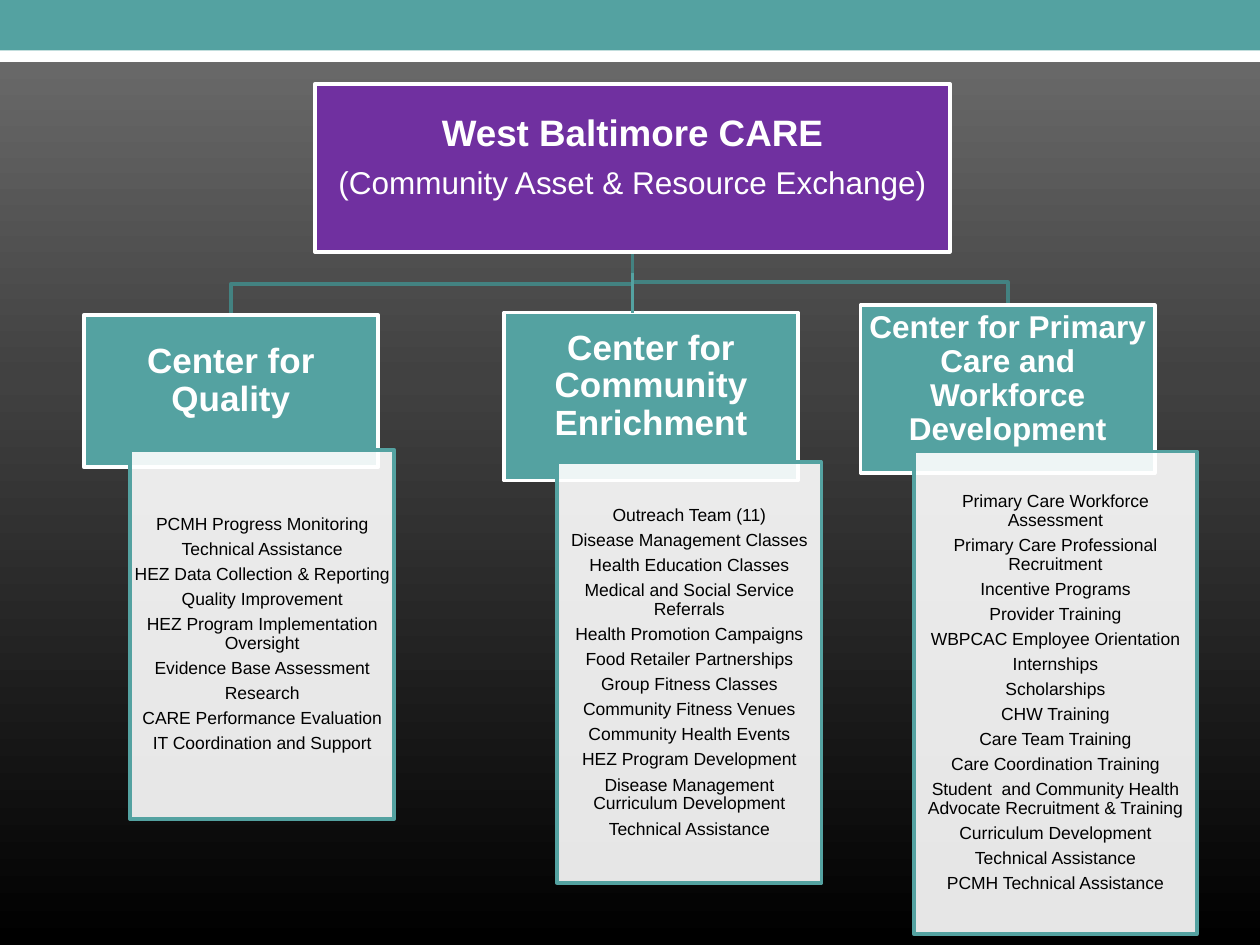
import copy

import pptx
import pptx.dml.color
import pptx.enum.shapes
import pptx.enum.text
import pptx.oxml
import pptx.oxml.ns
import pptx.util
from pptx.util import Cm

TEAL, WHITE, BLACK = "54A2A1", "FFFFFF", "000000"
LINE = 2.08
TRUNK = 12.75

# heading, size, heading box, list box (left, top, width, height in cm), items
CENTERS = [
    ("Center for Quality", 20, (1.69, 6.35, 5.93, 3.07), (2.62, 9.07, 5.33, 7.44), [
        "PCMH Progress Monitoring",
        "Technical Assistance",
        "HEZ Data Collection & Reporting",
        "Quality Improvement",
        "HEZ Program Implementation Oversight",
        "Evidence Base Assessment",
        "Research",
        "CARE Performance Evaluation",
        "IT Coordination and Support",
    ]),
    ("Center for Community Enrichment", 20, (10.16, 6.3, 5.93, 3.39), (11.23, 9.32, 5.33, 8.48), [
        "Outreach Team (11)",
        "Disease Management Classes",
        "Health Education Classes",
        "Medical and Social Service Referrals",
        "Health Promotion Campaigns",
        "Food Retailer Partnerships",
        "Group Fitness Classes",
        "Community Fitness Venues",
        "Community Health Events",
        "HEZ Program Development",
        "Disease Management Curriculum Development",
        "Technical Assistance",
    ]),
    ("Center for Primary Care and Workforce Development", 18,
     (17.35, 6.15, 5.93, 3.39), (18.42, 9.1, 5.71, 9.73), [
        "Primary Care Workforce Assessment",
        "Primary Care Professional Recruitment",
        "Incentive Programs",
        "Provider Training",
        "WBPCAC Employee Orientation",
        "Internships",
        "Scholarships",
        "CHW Training",
        "Care Team Training",
        "Care Coordination Training",
        "Student  and Community Health Advocate Recruitment & Training",
        "Curriculum Development",
        "Technical Assistance",
        "PCMH Technical Assistance",
    ]),
]


def rgb(code):
    return pptx.dml.color.RGBColor.from_string(code)


def paint_back(slide, stops):
    fill = slide.background.fill
    fill.gradient()
    fill.gradient_angle = 270
    group = slide.element.find(".//" + pptx.oxml.ns.qn("a:gsLst"))
    while len(group) < len(stops):
        group.append(copy.deepcopy(group[-1]))
    for stop, (place, color) in zip(fill.gradient_stops, stops):
        stop.position = place
        stop.color.rgb = rgb(color)


def set_line(line, color, width=LINE):
    line.color.rgb = rgb(color)
    line.width = pptx.util.Pt(width)


def add_box(slide, box, fill, edge=None):
    kind = pptx.enum.shapes.MSO_SHAPE.RECTANGLE
    shape = slide.shapes.add_shape(kind, *map(Cm, box))
    shape.shadow.inherit = False
    shape.fill.solid()
    shape.fill.fore_color.rgb = rgb(fill)
    if edge:
        set_line(shape.line, edge)
    else:
        shape.line.fill.background()
    return shape


def fade(shape, share):
    """Set the opacity of a solid fill, in percent."""
    qn = pptx.oxml.ns.qn
    color = shape.element.spPr.find(qn("a:solidFill")).find(qn("a:srgbClr"))
    color.makeelement(qn("a:alpha"))
    alpha = pptx.oxml.parse_xml(
        f'<a:alpha {pptx.oxml.ns.nsdecls("a")} val="{share * 1000}"/>')
    color.append(alpha)


def write(shape, rows, color, side, foot):
    """Fill a shape with centred rows of (text, size, bold)."""
    frame = shape.text_frame
    frame.word_wrap = True
    frame.vertical_anchor = pptx.enum.text.MSO_ANCHOR.MIDDLE
    frame.margin_left = frame.margin_right = Cm(side)
    frame.margin_top, frame.margin_bottom = Cm(0.03), Cm(foot)
    for i, (text, size, bold) in enumerate(rows):
        para = frame.add_paragraph() if i else frame.paragraphs[0]
        para.alignment = pptx.enum.text.PP_ALIGN.CENTER
        para.line_spacing = 0.9
        para.space_after = pptx.util.Pt(round(size * 0.35, 1))
        run = para.add_run()
        run.text = text
        run.font.name = "Arial"
        run.font.size = pptx.util.Pt(size)
        run.font.bold = bold
        run.font.color.rgb = rgb(color)


def add_title(slide, box, fill, rows):
    write(add_box(slide, box, fill, WHITE), rows, WHITE, 0.03, 0.43)


def add_list(slide, box, items):
    shape = add_box(slide, box, WHITE, TEAL)
    fade(shape, 90)
    write(shape, [(item, 10, False) for item in items], BLACK, 0.08, 0.03)


def add_branch(slide, top, bend, box):
    """Draw a bent line from the trunk to the top middle of a box."""
    end = box[0] + box[2] / 2
    points = [(TRUNK, bend), (end, bend), (end, box[1])]
    build = slide.shapes.build_freeform(Cm(TRUNK), Cm(top))
    build.add_line_segments([(Cm(x), Cm(y)) for x, y in points], close=False)
    shape = build.convert_to_shape()
    shape.shadow.inherit = False
    shape.fill.background()
    set_line(shape.line, "438281")


def add_trunk(slide, top, end):
    kind = pptx.enum.shapes.MSO_CONNECTOR.STRAIGHT
    line = slide.shapes.add_connector(kind, Cm(TRUNK), Cm(top), Cm(TRUNK), Cm(end))
    set_line(line.line, TEAL, 2)
    line.element.spPr.append(
        pptx.oxml.parse_xml(f'<a:effectLst {pptx.oxml.ns.nsdecls("a")}/>'))


def main():
    deck = pptx.Presentation()
    deck.slide_width, deck.slide_height = Cm(25.4), Cm(19.05)
    slide = deck.slides.add_slide(deck.slide_layouts[6])
    paint_back(slide, [(0, "707070"), (0.4, "414141"), (1, BLACK)])
    add_box(slide, (0, 0.61, 25.4, 0.64), WHITE)
    add_box(slide, (0, 0, 25.4, 1.02), TEAL)

    add_branch(slide, 5.23, 5.69, CENTERS[2][2])
    add_branch(slide, 5.03, 5.72, CENTERS[0][2])
    add_title(slide, (6.35, 1.69, 12.8, 3.39), "7030A0", [
        ("West Baltimore CARE", 21, True),
        ("(Community Asset & Resource Exchange)", 18, False),
    ])
    for name, size, head, body, items in CENTERS:
        add_title(slide, head, TEAL, [(name, size, True)])
        add_list(slide, body, items)
    add_trunk(slide, 5.51, CENTERS[1][2][1])
    deck.save("out.pptx")


if __name__ == "__main__":
    main()
